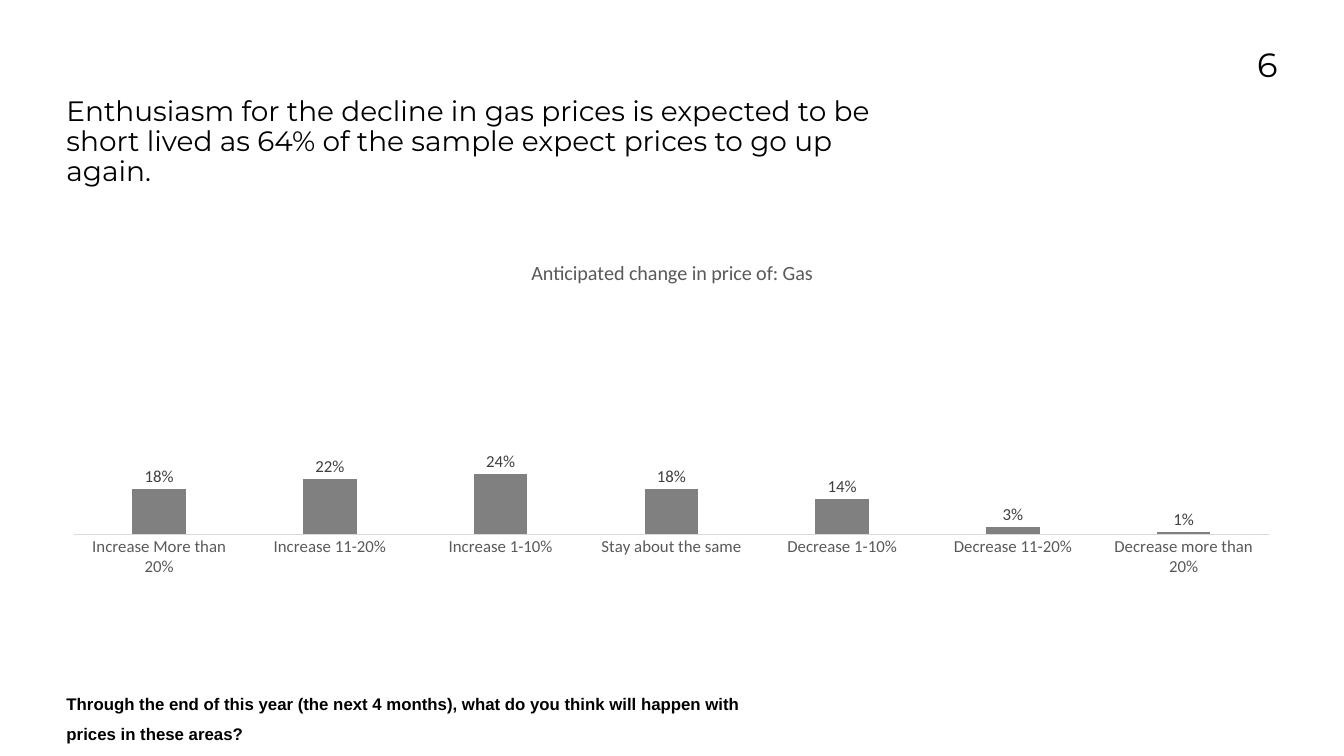
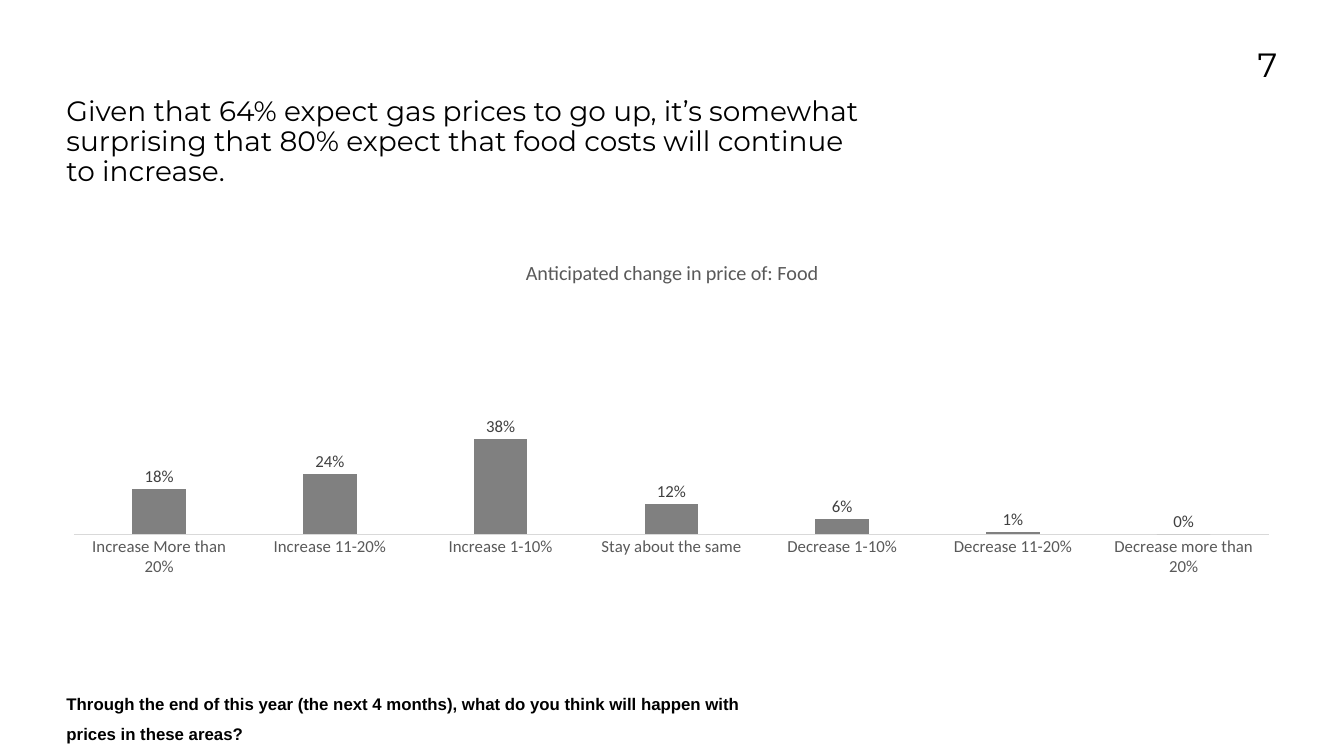
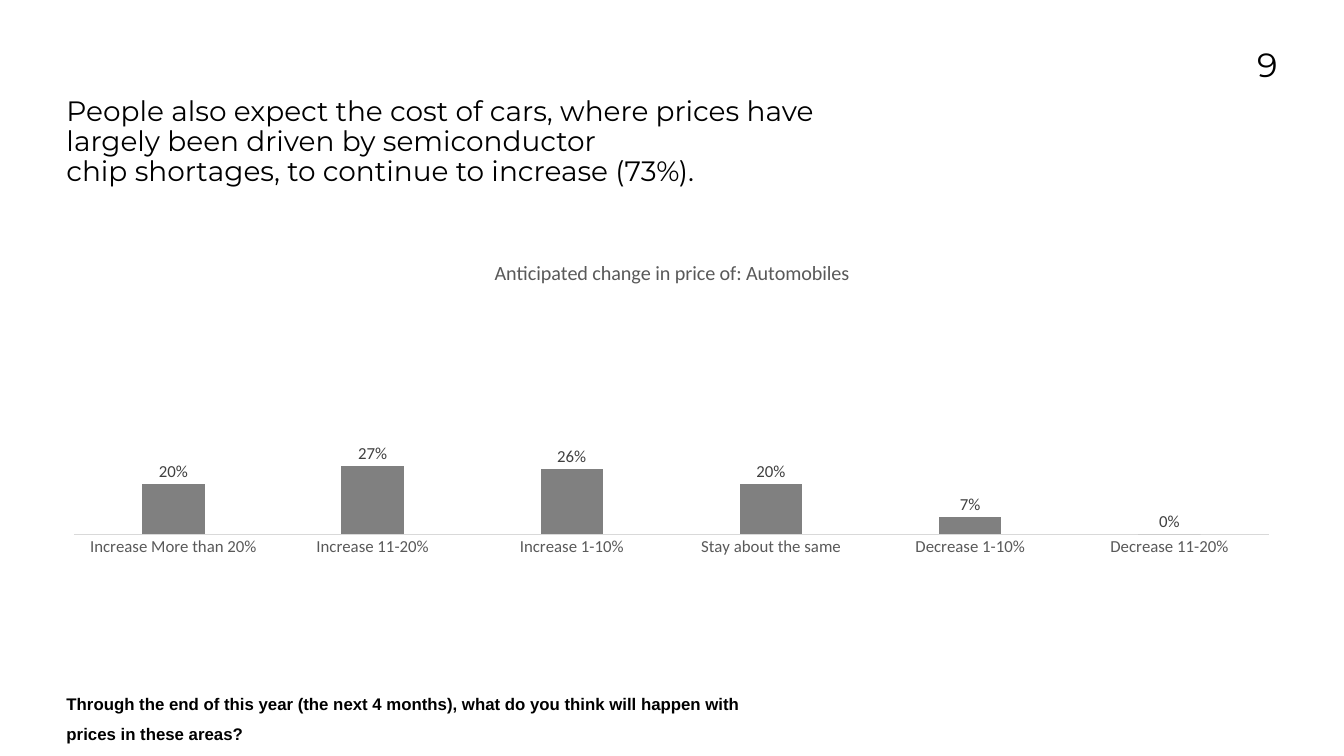
"""Build three slides on expected price changes, each with a headline, a column chart and the survey question."""
from lxml import etree
from pptx import Presentation
from pptx.chart.data import CategoryChartData
from pptx.dml.color import RGBColor
from pptx.enum.chart import XL_CHART_TYPE, XL_LABEL_POSITION, XL_TICK_MARK
from pptx.enum.text import MSO_ANCHOR, MSO_AUTO_SIZE, PP_ALIGN
from pptx.oxml import parse_xml
from pptx.oxml.ns import nsdecls, qn
from pptx.util import Pt

BLACK, BAR, AXIS_TEXT, LABEL_TEXT, AXIS_LINE = "000000", "808080", "595959", "404040", "D9D9D9"
LEFT, CONTENT_WIDTH = Pt(95), Pt(1730)
QUESTION = ("Through the end of this year (the next 4 months), what do you think "
            "will happen with prices in these areas?")
ANSWERS = ["Increase More than 20%", "Increase 11-20%", "Increase 1-10%", "Stay about the same",
           "Decrease 1-10%", "Decrease 11-20%", "Decrease more than 20%"]
PLOT_AREA = {"x": 0.006, "y": 0.099, "w": 0.987, "h": 0.669}
SLIDES = [
    ("6", "Gas", [0.18, 0.22, 0.24, 0.18, 0.14, 0.03, 0.01],
     "Enthusiasm for the decline in gas prices is expected to be short lived "
     "as 64% of the sample expect prices to go up again."),
    ("7", "Food", [0.18, 0.24, 0.38, 0.12, 0.06, 0.01, 0],
     "Given that 64% expect gas prices to go up, it’s somewhat surprising "
     "that 80% expect that food costs will continue to increase."),
    ("9", "Automobiles", [0.2, 0.27, 0.26, 0.2, 0.07, 0],
     "People also expect the cost of cars, where prices have largely been driven by semiconductor\n"
     "chip shortages, to continue to increase (73%)."),
]


def style_font(font, name, size, color, bold=False):
    font.name, font.size, font.bold = name, Pt(size), bold
    font.color.rgb = RGBColor.from_string(color)


def fill_text(frame, text, font_name, size, spacing=1.0, align=PP_ALIGN.LEFT, bold=False):
    frame.text = text
    frame.word_wrap = True
    frame.auto_size = MSO_AUTO_SIZE.NONE
    frame.vertical_anchor = MSO_ANCHOR.TOP
    frame.margin_left = frame.margin_right = frame.margin_top = frame.margin_bottom = 0
    for paragraph in frame.paragraphs:
        paragraph.alignment = align
        paragraph.line_spacing = spacing
        style_font(paragraph.font, font_name, size, BLACK, bold)


prs = Presentation()
prs.slide_width, prs.slide_height = Pt(1920), Pt(1080)
title_only = prs.slide_layouts[5]

for number, product, shares, headline in SLIDES:
    slide = prs.slides.add_slide(title_only)

    title = slide.shapes.title
    title.left, title.top, title.width, title.height = LEFT, Pt(139), Pt(1153), Pt(150)
    fill_text(title.text_frame, headline, "Montserrat", 40, spacing=0.9)

    page_number = slide.shapes.add_textbox(Pt(1663), Pt(63), Pt(162), Pt(118))
    fill_text(page_number.text_frame, number, "Montserrat", 48, align=PP_ALIGN.RIGHT)

    price_data = CategoryChartData(number_format="0%")
    price_data.categories = ANSWERS[:len(shares)]
    price_data.add_series("Series 1", shares)
    chart = slide.shapes.add_chart(XL_CHART_TYPE.COLUMN_CLUSTERED, LEFT, Pt(351),
                                   CONTENT_WIDTH, Pt(537), price_data).chart
    style_font(chart.font, "Calibri", 24, BLACK)
    chart.has_legend = False
    chart.has_title = True
    chart.chart_title.include_in_layout = False
    chart.chart_title.text_frame.text = f"Anticipated change in price of: {product}"
    style_font(chart.chart_title.text_frame.paragraphs[0].font, "Calibri", 28.8, AXIS_TEXT)

    answers_axis = chart.category_axis
    answers_axis.major_tick_mark = answers_axis.minor_tick_mark = XL_TICK_MARK.NONE
    style_font(answers_axis.tick_labels.font, "Calibri", 24, AXIS_TEXT)
    answers_axis.format.line.color.rgb = RGBColor.from_string(AXIS_LINE)
    answers_axis.format.line.width = Pt(0.75)

    share_axis = chart.value_axis
    share_axis.minimum_scale, share_axis.maximum_scale = 0, 1
    share_axis.has_major_gridlines = False
    share_axis.tick_labels.number_format = "0%"
    share_axis.tick_labels.number_format_is_linked = False
    share_axis.visible = False

    columns = chart.plots[0]
    columns.gap_width, columns.overlap = 219, -27
    columns.vary_by_categories = False
    columns.series[0].format.fill.solid()
    columns.series[0].format.fill.fore_color.rgb = RGBColor.from_string(BAR)
    labels = columns.series[0].data_labels
    labels.show_value = True
    labels.position = XL_LABEL_POSITION.OUTSIDE_END
    labels.number_format, labels.number_format_is_linked = "0%", False
    style_font(labels.font, "Calibri", 24, LABEL_TEXT)

    plot_area = chart.element.find(".//" + qn("c:plotArea"))
    for automatic_layout in plot_area.findall(qn("c:layout")):
        plot_area.remove(automatic_layout)
    layout = parse_xml(f"<c:layout {nsdecls('c')}><c:manualLayout/></c:layout>")
    settings = {"layoutTarget": "inner", "xMode": "edge", "yMode": "edge", **PLOT_AREA}
    for tag, value in settings.items():
        etree.SubElement(layout[0], qn(f"c:{tag}")).set("val", str(value))
    plot_area.insert(0, layout)

    question = slide.shapes.add_textbox(LEFT, Pt(976), Pt(986), Pt(47))
    fill_text(question.text_frame, QUESTION, "Arial", 24, spacing=1.5, bold=True)

prs.save("out.pptx")
